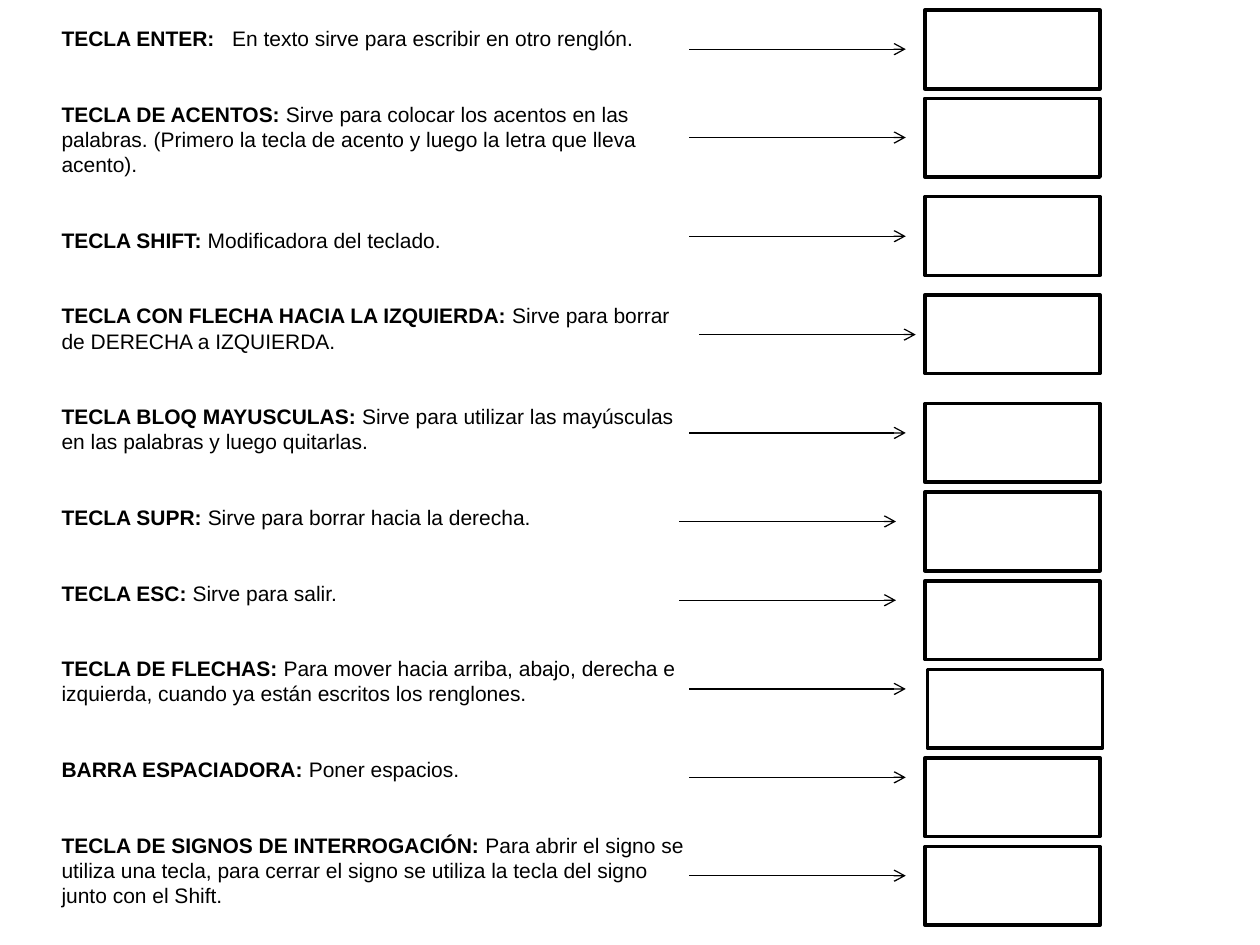
from lxml.etree import SubElement as Sub
from pptx import Presentation
from pptx.dml.color import RGBColor
from pptx.enum.shapes import MSO_CONNECTOR as Line, MSO_SHAPE as Shape
from pptx.oxml.ns import qn
from pptx.util import Pt

INK = "000000"
FONT = "Arial"
SIZE, LEAD = 12, 14.4

# Key name, gap after it, use, top of the key box, arrow start, arrow height
KEYS = [
    ("TECLA ENTER:", "\t", "En texto sirve para escribir en otro renglón.",
     5.8, 393.8, 28.1),
    ("TECLA DE ACENTOS:", " ", "Sirve para colocar los acentos en las palabras. "
     "(Primero la tecla de acento y luego la letra que lleva acento).",
     56.2, 393.8, 78.6),
    ("TECLA SHIFT:", " ", "Modificadora del teclado.", 112.4, 393.8, 135),
    ("TECLA CON FLECHA HACIA LA IZQUIERDA:", " ",
     "Sirve para borrar de DERECHA a IZQUIERDA.", 168.5, 399.5, 191.2),
    ("TECLA BLOQ MAYUSCULAS:", " ", "Sirve para utilizar las mayúsculas en las "
     "palabras y luego quitarlas.", 230.6, 393.8, 247.4),
    ("TECLA SUPR:", " ", "Sirve para borrar hacia la derecha.",
     281.2, 388.2, 298),
    ("TECLA ESC:", " ", "Sirve para salir.", 331.9, 388.2, 343),
    ("TECLA DE FLECHAS:", " ", "Para mover hacia arriba, abajo, derecha e "
     "izquierda, cuando ya están escritos los renglones.", 382.5, 393.8, 393.7),
    ("BARRA ESPACIADORA:", " ", "Poner espacios.", 433.1, 393.8, 444.2),
    ("TECLA DE SIGNOS DE INTERROGACIÓN:", " ", "Para abrir el signo se utiliza "
     "una tecla, para cerrar el signo se utiliza la tecla del signo junto con "
     "el Shift.", 483.7, 393.8, 500.4),
]


def color(code):
    return RGBColor.from_string(code)


def add_run(para, text, bold):
    run = para.add_run()
    run.text = text
    font = run.font
    font.name, font.size, font.bold = FONT, Pt(SIZE), bold
    font.color.rgb = color(INK)


def add_stop(para, at):
    stops = Sub(para._p.get_or_add_pPr(), qn("a:tabLst"))
    Sub(stops, qn("a:tab"), pos=str(Pt(at)), algn="l")


def add_list(slide, left, top, width, height):
    """Text column: one paragraph for each key."""
    frame = slide.shapes.add_textbox(
        Pt(left), Pt(top), Pt(width), Pt(height)).text_frame
    frame.word_wrap = True
    for i, (name, gap, use, *_) in enumerate(KEYS):
        para = frame.add_paragraph() if i else frame.paragraphs[0]
        para.line_spacing = Pt(LEAD)
        para.space_after = Pt(2 * LEAD if i < len(KEYS) - 1 else 0)
        if gap == "\t":
            add_stop(para, 97.5)
        add_run(para, name + gap, True)
        add_run(para, use, False)


def add_box(slide, left, top, width, height):
    """Empty frame where the key is drawn."""
    box = slide.shapes.add_shape(
        Shape.RECTANGLE, Pt(left), Pt(top), Pt(width), Pt(height))
    box.shadow.inherit = False
    box.fill.background()
    box.line.color.rgb = color(INK)
    box.line.width = Pt(2)


def add_arrow(slide, left, mid, width):
    """Level arrow from the text to the key box."""
    arrow = slide.shapes.add_connector(
        Line.STRAIGHT, Pt(left), Pt(mid), Pt(left + width), Pt(mid))
    arrow.line.color.rgb = color(INK)
    arrow.line.width = Pt(0.75)
    Sub(arrow.line._get_or_add_ln(), qn("a:tailEnd"), type="arrow")
    Sub(arrow._element.spPr, qn("a:effectLst"))


def add_keys(slide, left, width, height):
    """Column of key boxes, each with its arrow."""
    for name, _, _, top, start, mid in KEYS:
        shift = 1.4 if name == "TECLA DE FLECHAS:" else 0
        add_box(slide, left + shift, top, width, height)
        add_arrow(slide, start, mid, 123.8)


def main():
    deck = Presentation()
    deck.slide_width, deck.slide_height = Pt(720), Pt(540)
    slide = deck.slides.add_slide(deck.slide_layouts[6])
    add_list(slide, 28.1, 11.2, 376.6, 516.2)
    add_keys(slide, 528.5, 100.1, 45)
    deck.save("out.pptx")


if __name__ == "__main__":
    main()
